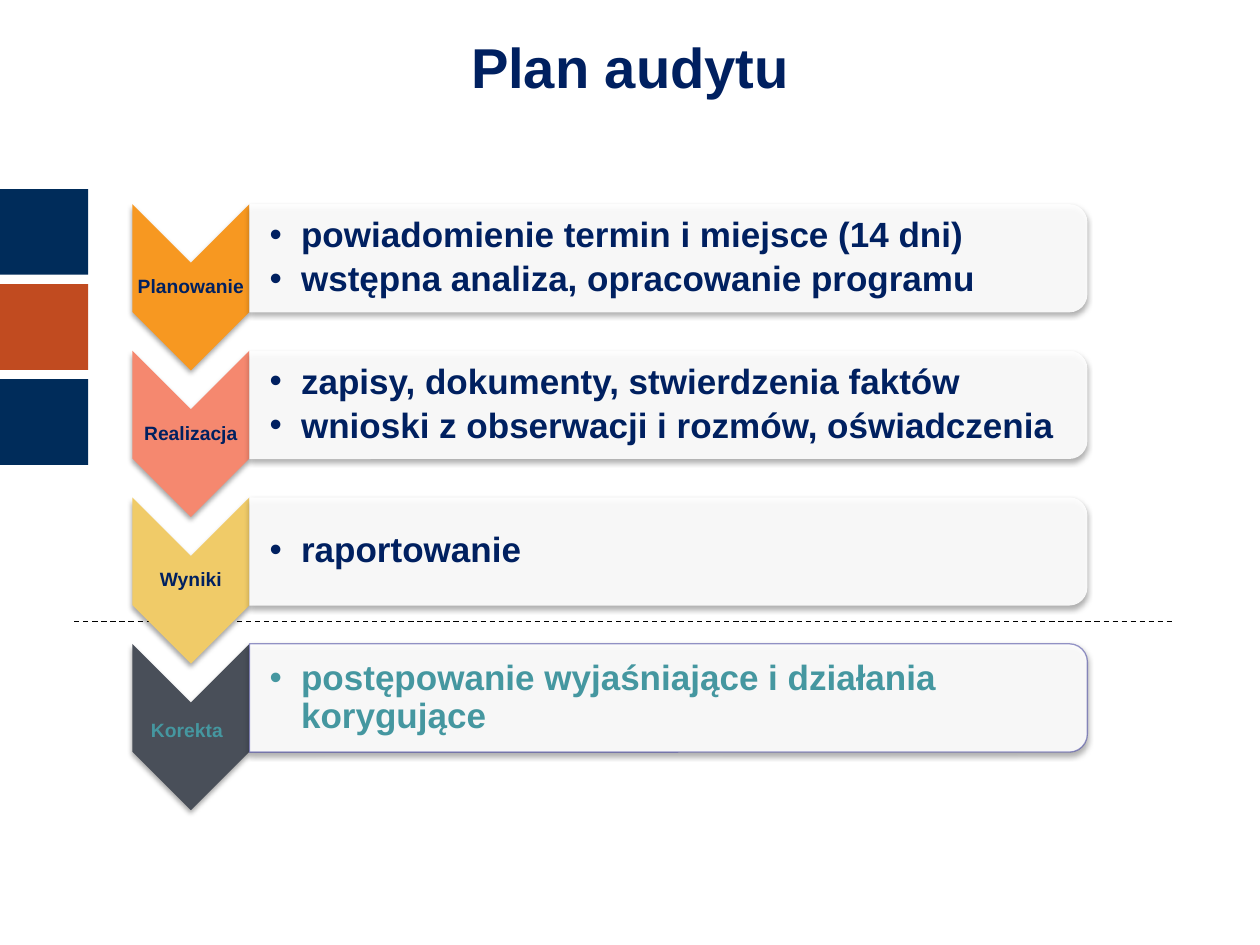
import pptx
import pptx.util
import pptx.dml.color
import pptx.enum.dml
import pptx.enum.shapes
import pptx.enum.text
import pptx.oxml
import pptx.oxml.ns
from pptx.util import Inches

NAVY, TEAL = "002060", "4597A0"
TITLE = "Plan audytu"
SIDE_BLOCKS = ["002C5A", "C14B20", "002C5A"]
STAGES = [
    ("Planowanie", "F79821", NAVY,
     ["powiadomienie termin i miejsce (14 dni)", "wstępna analiza, opracowanie programu"]),
    ("Realizacja", "F5886F", NAVY,
     ["zapisy, dokumenty, stwierdzenia faktów", "wnioski z obserwacji i rozmów, oświadczenia"]),
    ("Wyniki", "F0CB68", NAVY, ["raportowanie"]),
    ("Korekta", "494F59", TEAL, ["postępowanie wyjaśniające i działania korygujące"]),
]
FIRST_TOP, PITCH = 1.62, 3.49 / 3
CHEVRON_LEFT, CHEVRON_W, CHEVRON_H = 1.05, 0.93, 1.32
PANEL_LEFT, PANEL_W, PANEL_H = 1.98, 6.65, 0.86

SHAPE = pptx.enum.shapes.MSO_SHAPE
ALIGN = pptx.enum.text.PP_ALIGN
ANCHOR = pptx.enum.text.MSO_ANCHOR
NS = pptx.oxml.ns.nsdecls("a")


def rgb(value):
    return pptx.dml.color.RGBColor.from_string(value)


def xml(text):
    return pptx.oxml.parse_xml(text)


def set_alpha(fill_parent, percent):
    clr = fill_parent.find(".//" + pptx.oxml.ns.qn("a:srgbClr"))
    clr.append(xml(f'<a:alpha {NS} val="{percent * 1000}"/>'))


def add_shadow(sp):
    effects = sp._element.spPr.find(pptx.oxml.ns.qn("a:effectLst"))
    effects.append(xml(
        f'<a:outerShdw {NS} blurRad="{pptx.util.Pt(3.1)}" dist="{pptx.util.Pt(1.8)}" '
        'dir="5400000" rotWithShape="0"><a:srgbClr val="000000">'
        '<a:alpha val="35000"/></a:srgbClr></a:outerShdw>'))


def add_block(s, kind, left, top, width, height, color, turned=False):
    if turned:
        left, top = left + (width - height) / 2, top + (height - width) / 2
        width, height = height, width
    sp = s.shapes.add_shape(kind, Inches(left), Inches(top), Inches(width), Inches(height))
    sp.rotation = 90 if turned else 0
    sp.shadow.inherit = False
    sp.fill.solid()
    sp.fill.fore_color.rgb = rgb(color)
    sp.line.fill.background()
    return sp


def add_text(s, lines, left, top, width, height, size, color, align=ALIGN.LEFT,
             anchor=ANCHOR.MIDDLE, inset=0.01, left_inset=None, spacing=None, after=0,
             bullet=False):
    sp = s.shapes.add_textbox(Inches(left), Inches(top), Inches(width), Inches(height))
    tf = sp.text_frame
    tf.word_wrap = True
    tf.vertical_anchor = anchor
    tf.margin_top = tf.margin_bottom = tf.margin_right = Inches(inset)
    tf.margin_left = Inches(inset if left_inset is None else left_inset)
    for i, line in enumerate(lines):
        p = tf.add_paragraph() if i else tf.paragraphs[0]
        p.alignment = align
        p.line_spacing = spacing
        p.space_after = pptx.util.Pt(after)
        if bullet:
            pPr = p._p.get_or_add_pPr()
            pPr.set("marL", str(Inches(0.25)))
            pPr.set("indent", str(Inches(-0.25)))
            pPr.append(xml(f'<a:buFont {NS} typeface="Arial"/>'))
            pPr.append(xml(f'<a:buChar {NS} char="•"/>'))
        r = p.add_run()
        r.text = line
        r.font.name = "Arial"
        r.font.size = pptx.util.Pt(size)
        r.font.bold = True
        r.font.color.rgb = rgb(color)
    return tf


def add_stage(s, top, label, fill, color, points):
    chevron = add_block(s, SHAPE.CHEVRON, CHEVRON_LEFT, top, CHEVRON_W, CHEVRON_H, fill, True)
    add_shadow(chevron)
    tf = add_text(s, [label], CHEVRON_LEFT, top + 0.46, CHEVRON_W, 0.4, 11, color,
                  align=ALIGN.CENTER, spacing=0.9, after=4)
    panel = add_block(s, SHAPE.ROUND_2_SAME_RECTANGLE, PANEL_LEFT, top, PANEL_W, PANEL_H,
                      "FFFFFF", True)
    set_alpha(panel._element.spPr, 90)
    add_shadow(panel)
    add_text(s, points, PANEL_LEFT, top + 0.04, 6.61, 0.78, 20, color,
             left_inset=0.16, spacing=0.9, after=3.5, bullet=True)
    return tf, panel


def main():
    prs = pptx.Presentation()
    prs.slide_width, prs.slide_height = Inches(10), Inches(7.5)
    s = prs.slides.add_slide(prs.slide_layouts[6])

    for i, color in enumerate(SIDE_BLOCKS):
        add_block(s, SHAPE.RECTANGLE, 0, 1.5 + i * 0.755, 0.7, 0.68, color)

    divider = s.shapes.add_connector(pptx.enum.shapes.MSO_CONNECTOR.STRAIGHT,
                                     Inches(0.59), Inches(4.93), Inches(9.33), Inches(4.93))
    divider.line.color.rgb = rgb("000000")
    divider.line.width = pptx.util.Pt(0.75)
    divider.line.dash_style = pptx.enum.dml.MSO_LINE.DASH
    divider._element.spPr.append(xml(f"<a:effectLst {NS}/>"))

    for i, stage in enumerate(STAGES):
        label, panel = add_stage(s, FIRST_TOP + i * PITCH, *stage)

    r = label.paragraphs[0].add_run()
    r.text = " "
    r.font.name = "Times New Roman"
    r.font.size = pptx.util.Pt(18)
    panel.line.color.rgb = rgb("333399")
    panel.line.width = pptx.util.Pt(0.75)
    set_alpha(panel.line._ln, 50)

    add_text(s, [TITLE], 0.75, 0.21, 8.5, 1.26, 32.1, NAVY, align=ALIGN.CENTER,
             anchor=ANCHOR.TOP, inset=0.05, left_inset=0.05)
    prs.save("out.pptx")


if __name__ == "__main__":
    main()
